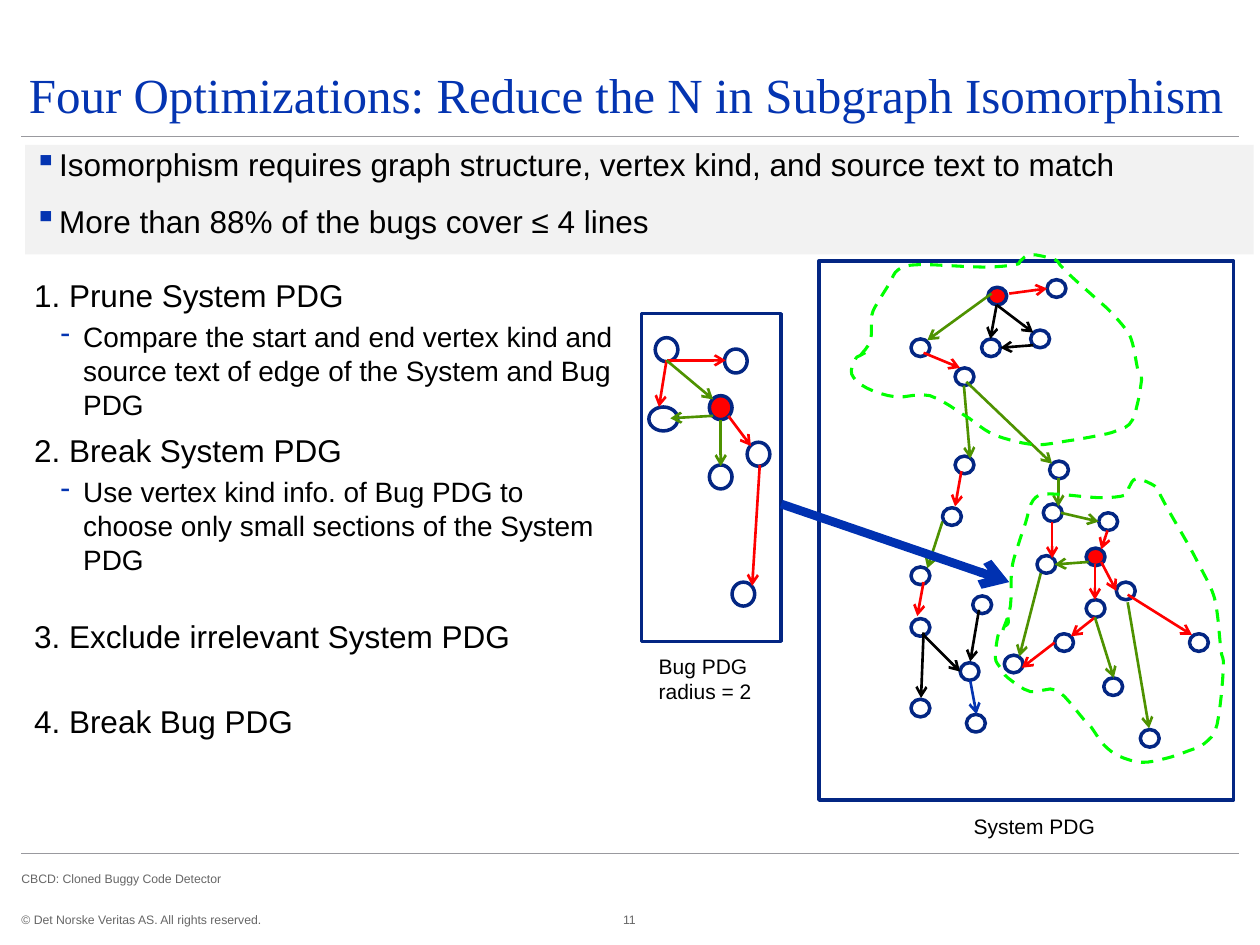
import pptx
import pptx.dml.color
import pptx.enum.dml
import pptx.enum.shapes
import pptx.enum.text
import pptx.oxml.ns
import pptx.util
from lxml import etree

EMU_PER_PX = 9144
COLORS = {
    "title": "0434B1", "navy": "032683", "text": "000000", "footer": "666666",
    "rule": "99999E", "panel": "F2F2F2", "red": "FF0000", "green": "4E9200",
    "black": "000000", "blue": "0434B1", "match": "0031B1", "region": "00FF00",
}
ALIGN = pptx.enum.text.PP_ALIGN
ANCHOR = pptx.enum.text.MSO_ANCHOR
SHAPE = pptx.enum.shapes.MSO_SHAPE

BUG_NODES = [(520, 268), (563, 369), (575, 277), (593, 351), (581, 462)]
BUG_EDGES = [
    ("red", 529, 286, 523, 323), ("red", 529, 286, 576, 286),
    ("green", 529, 286, 566, 317), ("green", 566, 330, 532, 332),
    ("green", 572, 333, 572, 370), ("red", 578, 330, 596, 354),
    ("red", 603, 369, 597, 465),
]
SYSTEM_NODES = [
    (772, 473), (762, 526), (767, 567), (723, 555), (818, 262), (779, 269),
    (828, 400), (823, 441), (862, 476), (872, 407), (886, 462), (837, 503),
    (876, 538), (797, 520), (905, 579), (944, 503), (723, 491), (833, 366),
    (758, 362), (748, 403), (723, 450), (831, 222), (723, 269), (758, 292),
]
SYSTEM_RED_NODES = [(862, 435), (784, 228)]
SYSTEM_EDGES = [
    ("black", 777, 484, 770, 525), ("black", 732, 503, 762, 533),
    ("black", 733, 502, 731, 554), ("blue", 770, 540, 775, 567),
    ("black", 791, 242, 820, 264), ("black", 820, 274, 794, 276),
    ("black", 791, 242, 786, 269), ("green", 864, 446, 837, 448),
    ("green", 842, 407, 872, 414), ("red", 835, 414, 835, 443),
    ("red", 879, 421, 874, 436), ("red", 874, 446, 886, 469),
    ("red", 869, 448, 869, 476), ("red", 869, 490, 850, 505),
    ("green", 869, 490, 884, 538), ("green", 840, 379, 840, 402),
    ("green", 767, 303, 835, 368), ("green", 765, 306, 770, 364),
    ("red", 763, 374, 758, 402), ("green", 748, 414, 736, 451),
    ("red", 733, 462, 728, 489), ("green", 826, 455, 809, 521),
    ("red", 837, 510, 811, 530), ("green", 895, 478, 912, 578),
    ("red", 895, 472, 946, 504), ("red", 801, 233, 831, 229),
    ("green", 787, 233, 736, 270), ("red", 733, 280, 762, 292),
]
LOWER_REGION = [
    (796, 500), (802, 481), (803, 452), (808, 433), (814, 415), (820, 397),
    (833, 392), (872, 395), (893, 393), (896, 387), (902, 380), (917, 386),
    (921, 393), (928, 406), (943, 432), (951, 447), (962, 469), (966, 486),
    (969, 516), (971, 530), (966, 575), (956, 590), (943, 596), (925, 602),
    (906, 605), (888, 600), (876, 591), (866, 577), (861, 572), (839, 548),
    (818, 549), (800, 538), (794, 530), (790, 522), (792, 505), (795, 499),
    (800, 495), (800, 490),
]
UPPER_REGION = [
    (683, 282), (691, 270), (692, 250), (698, 238), (706, 225), (713, 214),
    (730, 210), (780, 212), (806, 210), (810, 207), (818, 202), (837, 206),
    (842, 211), (851, 220), (870, 237), (881, 247), (894, 262), (899, 273),
    (903, 293), (906, 302), (899, 333), (886, 342), (870, 346), (847, 350),
    (823, 353), (801, 349), (785, 343), (772, 334), (766, 330), (738, 314),
    (711, 315), (688, 308), (676, 297), (679, 285), (683, 282), (688, 279),
    (688, 276),
]


def px(value):
    return pptx.util.Emu(round(value * EMU_PER_PX))


def color(name):
    return pptx.dml.color.RGBColor.from_string(COLORS[name])


def add_bullet(paragraph, character, margin, indent):
    properties = paragraph._p.get_or_add_pPr()
    properties.set("marL", str(px(margin)))
    properties.set("indent", str(px(indent)))
    bullet_color = etree.SubElement(properties, pptx.oxml.ns.qn("a:buClr"))
    etree.SubElement(bullet_color, pptx.oxml.ns.qn("a:srgbClr"), val=COLORS["title"])
    etree.SubElement(properties, pptx.oxml.ns.qn("a:buChar"), char=character)


def write(paragraph, text, size, name="text", font="Arial"):
    run = paragraph.add_run()
    run.text = text
    run.font.size = pptx.util.Pt(size)
    run.font.name = font
    run.font.color.rgb = color(name)


def set_frame(frame, side=0, top=0, anchor=ANCHOR.TOP):
    frame.word_wrap = True
    frame.margin_left = frame.margin_right = px(side)
    frame.margin_top = frame.margin_bottom = px(top)
    frame.vertical_anchor = anchor


def add_text(slide, box, lines, size, name="text", font="Arial",
             align=ALIGN.LEFT, **frame_options):
    frame = slide.shapes.add_textbox(*map(px, box)).text_frame
    set_frame(frame, **frame_options)
    for index, line in enumerate(lines):
        paragraph = frame.add_paragraph() if index else frame.paragraphs[0]
        paragraph.alignment = align
        write(paragraph, line, size, name, font)


def add_step(slide, top, height, heading, detail=None):
    frame = slide.shapes.add_textbox(*map(px, (20, top, 475, height))).text_frame
    set_frame(frame, side=7)
    paragraph = frame.paragraphs[0]
    paragraph.space_after = pptx.util.Pt(3.6)
    write(paragraph, heading, 18)
    if detail:
        paragraph = frame.add_paragraph()
        add_bullet(paragraph, "-", 39, -18)
        paragraph.space_after = pptx.util.Pt(3.2)
        write(paragraph, detail, 16)


def add_outline(slide, kind, box, fill=None):
    shape = slide.shapes.add_shape(kind, *map(px, box))
    shape.shadow.inherit = False
    if fill:
        shape.fill.solid()
        shape.fill.fore_color.rgb = color(fill)
    else:
        shape.fill.background()
    shape.line.color.rgb = color("navy")
    shape.line.width = pptx.util.Pt(2)
    return shape


def add_panel(slide, box, bullets):
    shape = add_outline(slide, SHAPE.RECTANGLE, box, "panel")
    shape.line.fill.background()
    frame = shape.text_frame
    set_frame(frame, side=7)
    for index, text in enumerate(bullets):
        paragraph = frame.add_paragraph() if index else frame.paragraphs[0]
        paragraph.alignment = ALIGN.LEFT
        add_bullet(paragraph, "▪", 20, -20)
        if index:
            paragraph.space_before = pptx.util.Pt(7.2)
        paragraph.space_after = pptx.util.Pt(3.6)
        write(paragraph, text, 18)


def add_line(slide, name, ends, width, arrow=False):
    connector = slide.shapes.add_connector(
        pptx.enum.shapes.MSO_CONNECTOR.STRAIGHT, *map(px, ends))
    connector.line.color.rgb = color(name)
    connector.line.width = pptx.util.Pt(width)
    if arrow:
        line = connector.line._get_or_add_ln()
        etree.SubElement(line, pptx.oxml.ns.qn("a:tailEnd"), type="arrow")
    etree.SubElement(connector._element.spPr, pptx.oxml.ns.qn("a:effectLst"))


def add_graph(slide, nodes, red_nodes, node_size, edges):
    for group, fill in ((nodes, None), (red_nodes, "red")):
        for node in group:
            add_outline(slide, SHAPE.OVAL, node + node_size, fill)
    for name, *ends in edges:
        add_line(slide, name, ends, 1.5, arrow=True)


def smooth(points, steps=4):
    padded = [points[0], *points, points[-1]]
    curve = []
    for corners in zip(padded, padded[1:], padded[2:], padded[3:]):
        for step in range(1, steps + 1):
            t = step / steps
            curve.append(tuple(
                px(b + t * (c - a + t * (2 * a - 5 * b + 4 * c - d
                                         + t * (3 * b - a - 3 * c + d))) / 2)
                for a, b, c, d in zip(*corners)))
    return curve


def add_region(slide, points):
    builder = slide.shapes.build_freeform(*map(px, points[0]), scale=1.0)
    builder.add_line_segments(smooth(points), close=False)
    shape = builder.convert_to_shape()
    shape.shadow.inherit = False
    shape.fill.background()
    shape.line.color.rgb = color("region")
    shape.line.width = pptx.util.Pt(1.75)
    shape.line.dash_style = pptx.enum.dml.MSO_LINE.DASH


def main():
    presentation = pptx.Presentation()
    presentation.slide_width, presentation.slide_height = px(1000), px(750)
    slide = presentation.slides.add_slide(presentation.slide_layouts[6])

    footer = {"size": 7, "name": "footer", "anchor": ANCHOR.MIDDLE}
    add_text(slide, (17, 724, 315, 12),
             ["© Det Norske Veritas AS. All rights reserved."], **footer)
    add_text(slide, (17, 691, 354, 12), ["CBCD: Cloned Buggy Code Detector"], **footer)
    add_text(slide, (480, 724, 39, 12), ["11"], align=ALIGN.CENTER, **footer)
    for y in (108, 677):
        add_line(slide, "rule", (17, y, 983, y), 0.5)
    add_text(slide, (17, 16, 967, 82),
             ["Four Optimizations: Reduce the N in Subgraph Isomorphism"],
             28, "title", "Times New Roman", side=6, anchor=ANCHOR.BOTTOM)

    add_step(slide, 219, 126, "1. Prune System PDG",
             "Compare the start and end vertex kind and source text of edge "
             "of the System and Bug PDG")
    add_step(slide, 342, 127, "2. Break System PDG",
             "Use vertex kind info. of Bug PDG to choose only small sections "
             "of the System PDG")
    add_step(slide, 490, 39, "3. Exclude irrelevant System PDG")
    add_step(slide, 557, 47, "4. Break Bug PDG")
    add_panel(slide, (20, 115, 975, 87), [
        "Isomorphism requires graph structure, vertex kind, and source text to match",
        "More than 88% of the bugs cover ≤ 4 lines"])

    add_outline(slide, SHAPE.RECTANGLE, (509, 249, 111, 260))
    add_outline(slide, SHAPE.OVAL, (515, 323, 23, 19))
    add_graph(slide, BUG_NODES, [(563, 314)], (18, 19), BUG_EDGES)
    add_text(slide, (513, 514, 114, 50), ["Bug PDG", "radius = 2"], 12, side=10, top=5)

    add_outline(slide, SHAPE.RECTANGLE, (650, 207, 329, 428))
    add_graph(slide, SYSTEM_NODES, SYSTEM_RED_NODES, (15, 14), SYSTEM_EDGES)
    for region in (LOWER_REGION, UPPER_REGION):
        add_region(slide, region)
    add_text(slide, (763, 641, 127, 30), ["System PDG"], 12, side=10, top=5)
    add_line(slide, "match", (620, 400, 801, 462), 5, arrow=True)
    presentation.save("out.pptx")


if __name__ == "__main__":
    main()
